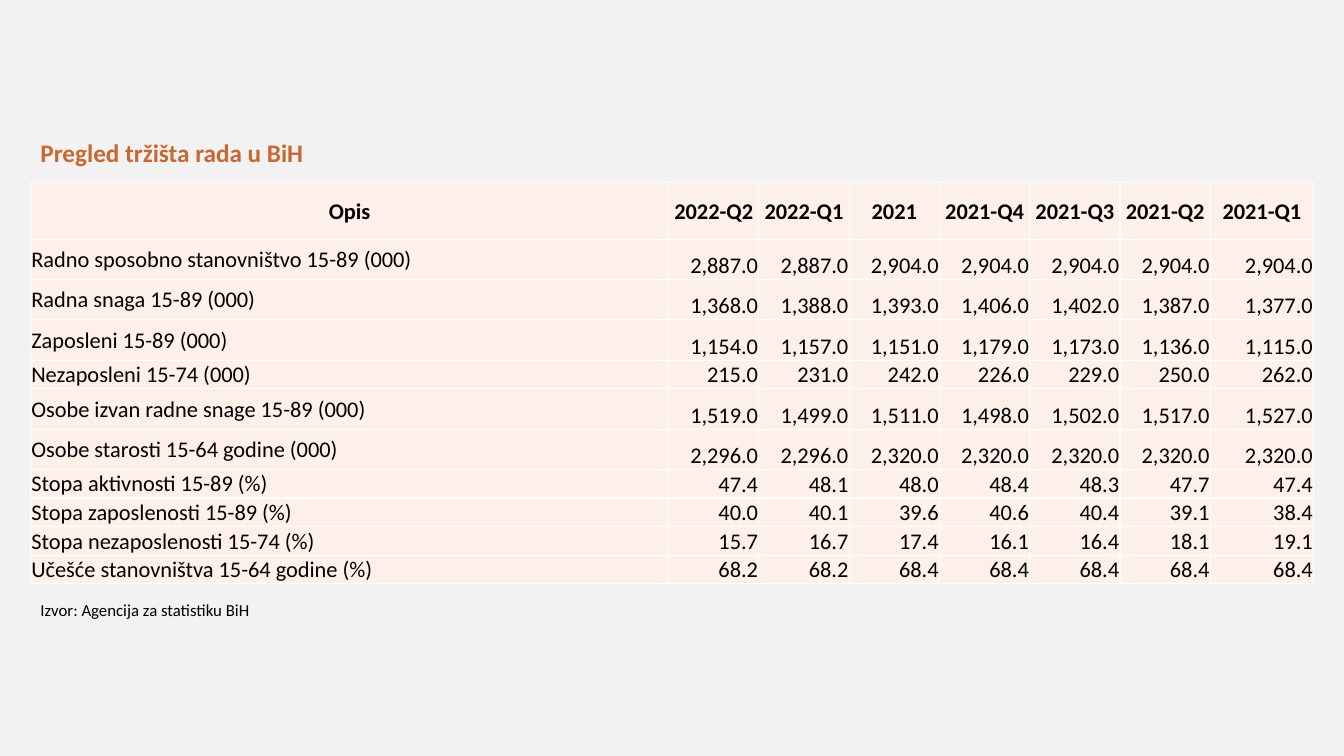
from pptx import Presentation
from pptx.dml.color import RGBColor
from pptx.enum.text import MSO_ANCHOR as Anchor, PP_ALIGN as Align
from pptx.oxml import parse_xml
from pptx.oxml.ns import nsdecls
from pptx.util import Pt

PERIODS = ["2022-Q2", "2022-Q1", "2021", "2021-Q4", "2021-Q3", "2021-Q2", "2021-Q1"]
INDICATORS = [
    ("Radno sposobno stanovništvo 15-89 (000)", [2887, 2887, 2904, 2904, 2904, 2904, 2904]),
    ("Radna snaga 15-89 (000)", [1368, 1388, 1393, 1406, 1402, 1387, 1377]),
    ("Zaposleni 15-89 (000)", [1154, 1157, 1151, 1179, 1173, 1136, 1115]),
    ("Nezaposleni 15-74 (000)", [215, 231, 242, 226, 229, 250, 262]),
    ("Osobe izvan radne snage 15-89 (000)", [1519, 1499, 1511, 1498, 1502, 1517, 1527]),
    ("Osobe starosti 15-64 godine (000)", [2296, 2296, 2320, 2320, 2320, 2320, 2320]),
    ("Stopa aktivnosti 15-89 (%)", [47.4, 48.1, 48.0, 48.4, 48.3, 47.7, 47.4]),
    ("Stopa zaposlenosti 15-89 (%)", [40.0, 40.1, 39.6, 40.6, 40.4, 39.1, 38.4]),
    ("Stopa nezaposlenosti 15-74 (%)", [15.7, 16.7, 17.4, 16.1, 16.4, 18.1, 19.1]),
    ("Učešće stanovništva 15-64 godinе (%)", [68.2, 68.2, 68.4, 68.4, 68.4, 68.4, 68.4]),
]
COLUMN_WIDTHS = [455.8] + [64.5] * 6 + [73.8]
HEADER_HEIGHT, TALL_ROW, SHORT_ROW = 40.3, 28.8, 20.45


def color(value):
    return RGBColor.from_string(value)


class SlideBuilder:
    font = "Calibri"
    ink, accent = "000000", "C96731"
    background, cell_fill, border = "F2F2F2", "FDF0E8", "FFFFFF"

    def __init__(self, page):
        self.page = page
        page.background.fill.solid()
        page.background.fill.fore_color.rgb = color(self.background)

    def style(self, para, size, ink, bold=False, align=Align.LEFT):
        para.alignment = align
        para.font.name = self.font
        para.font.size = Pt(size)
        para.font.bold = bold
        para.font.color.rgb = color(ink)

    def text(self, words, left, top, width, height, size, ink, bold=False):
        box = self.page.shapes.add_textbox(Pt(left), Pt(top), Pt(width), Pt(height))
        box.text_frame.word_wrap = True
        box.text_frame.text = words
        self.style(box.text_frame.paragraphs[0], size, ink, bold)

    def cell(self, cell, words, align, anchor, bold=False):
        cell.margin_left = cell.margin_right = cell.margin_top = Pt(0.6)
        cell.margin_bottom = 0
        cell.vertical_anchor = anchor
        cell.text = words
        self.style(cell.text_frame.paragraphs[0], 16, self.ink, bold, align)
        # Borders come before the fill in the cell properties
        properties = cell._tc.get_or_add_tcPr()
        for side in ("lnL", "lnR", "lnT", "lnB"):
            properties.append(parse_xml(
                f'<a:{side} {nsdecls("a")} w="{Pt(1)}"><a:solidFill>'
                f'<a:srgbClr val="{self.border}"/></a:solidFill></a:{side}>'))
        cell.fill.solid()
        cell.fill.fore_color.rgb = color(self.cell_fill)

    def table(self, left, top, widths, heights):
        frame = self.page.shapes.add_table(
            len(heights), len(widths), Pt(left), Pt(top), Pt(sum(widths)), Pt(sum(heights)))
        table = frame.table
        table.horz_banding = False
        for column, width in zip(table.columns, widths):
            column.width = Pt(width)
        for row, height in zip(table.rows, heights):
            row.height = Pt(height)
        return table


def main():
    deck = Presentation()
    deck.slide_width, deck.slide_height = Pt(960), Pt(540)
    builder = SlideBuilder(deck.slides.add_slide(deck.slide_layouts[6]))

    # Table: values in thousands get tall rows, shorter figures get short rows
    heights = [HEADER_HEIGHT] + [
        TALL_ROW if values[0] >= 1000 else SHORT_ROW for _, values in INDICATORS]
    table = builder.table(21.8, 130.6, COLUMN_WIDTHS, heights)
    for column, heading in enumerate(["Opis"] + PERIODS):
        builder.cell(table.cell(0, column), heading, Align.CENTER, Anchor.MIDDLE, bold=True)
    for row, (label, values) in enumerate(INDICATORS, 1):
        builder.cell(table.cell(row, 0), label, Align.LEFT, Anchor.MIDDLE)
        for column, value in enumerate(values, 1):
            builder.cell(table.cell(row, column), f"{value:,.1f}", Align.RIGHT, Anchor.BOTTOM)

    # Source line and title
    builder.text("Izvor: Agencija za statistiku BiH", 21.8, 424.8, 602, 21.8, 12, builder.ink)
    builder.text("Pregled tržišta rada u BiH", 21.8, 94.6, 424, 29, 18, builder.accent, bold=True)

    deck.save("out.pptx")


if __name__ == "__main__":
    main()
